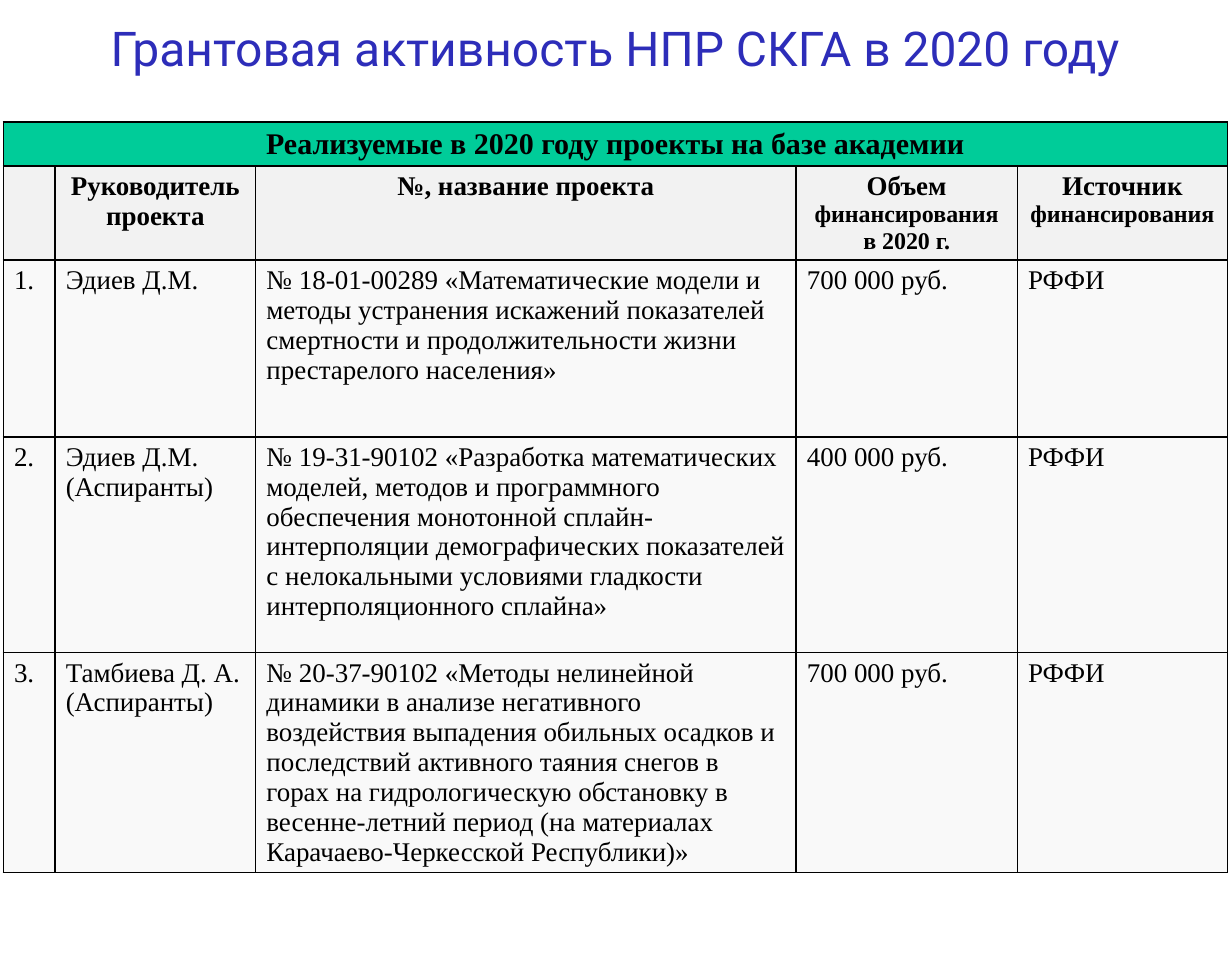
from lxml import etree
from pptx import Presentation
from pptx.dml.color import RGBColor
from pptx.enum.text import MSO_ANCHOR, MSO_AUTO_SIZE, PP_ALIGN
from pptx.oxml.ns import qn
from pptx.util import Inches, Pt

LEFT, CENTER = PP_ALIGN.LEFT, PP_ALIGN.CENTER
TOP, FIXED = MSO_ANCHOR.TOP, MSO_AUTO_SIZE.NONE
BLUE = RGBColor(0x2D, 0x2D, 0xB9)
GREEN = RGBColor(0x00, 0xCC, 0x99)
GREY = RGBColor(0xF2, 0xF2, 0xF2)
PALE = RGBColor(0xF9, 0xF9, 0xF9)
BLACK = RGBColor(0, 0, 0)
SERIF = "Times New Roman"

TITLE = "Грантовая активность НПР СКГА в 2020 году"
BANNER = "Реализуемые в 2020 году проекты на базе академии"
# Each heading: large part, small part
HEADS = [
    ("", ""),
    ("Руководитель проекта", ""),
    ("№, название проекта", ""),
    ("Объем ", "финансирования в 2020 г."),
    ("Источник ", "финансирования"),
]
GRANTS = [
    ("1.", "Эдиев Д.М.",
     "№ 18-01-00289 «Математические модели и методы устранения искажений "
     "показателей смертности и продолжительности жизни престарелого населения»",
     "700 000 руб.", "РФФИ"),
    ("2.", "Эдиев Д.М.\n(Аспиранты)",
     "№ 19-31-90102 «Разработка математических моделей, методов и программного "
     "обеспечения монотонной сплайн-интерполяции демографических показателей "
     "с нелокальными условиями гладкости интерполяционного сплайна»",
     "400 000 руб.", "РФФИ"),
    ("3.", "Тамбиева Д. А.\n(Аспиранты)",
     "№ 20-37-90102 «Методы нелинейной динамики в анализе негативного "
     "воздействия выпадения обильных осадков и последствий активного таяния "
     "снегов в горах на гидрологическую обстановку в весенне-летний период "
     "(на материалах Карачаево-Черкесской Республики)»",
     "700 000 руб.", "РФФИ"),
]
COLS = [0.48, 1.86, 5.01, 2.05, 1.95]
ROWS = [0.41, 0.87, 1.64, 2, 2.03]


def style(font, name, size, color, bold=False):
    font.name, font.size, font.bold = name, Pt(size), bold
    font.color.rgb = color


def add_title(slide, left, top, width, height):
    title = slide.shapes.title
    title.left, title.top = Inches(left), Inches(top)
    title.width, title.height = Inches(width), Inches(height)
    frame = title.text_frame
    frame.text = TITLE
    frame.auto_size, frame.vertical_anchor = FIXED, TOP
    para = frame.paragraphs[0]
    para.alignment = CENTER
    style(para.runs[0].font, "Roboto", 32, BLUE)


def add_edges(cell):
    """Draw a thin black line on all four sides of the cell."""
    props = cell._tc.get_or_add_tcPr()
    for place, side in enumerate(("lnL", "lnR", "lnT", "lnB")):
        line = etree.Element(qn("a:" + side), w=str(Pt(1)))
        fill = etree.SubElement(line, qn("a:solidFill"))
        etree.SubElement(fill, qn("a:srgbClr"), val=str(BLACK))
        props.insert(place, line)


def fill_cell(cell, text, color, size=18, align=LEFT, bold=False, small=""):
    cell.fill.solid()
    cell.fill.fore_color.rgb = color
    cell.text_frame.text = text
    for para in cell.text_frame.paragraphs:
        para.alignment = align
        style(para.font, SERIF, size, BLACK, bold)
        for run in para.runs:
            style(run.font, SERIF, size, BLACK, bold)
    if small:
        run = cell.text_frame.paragraphs[0].add_run()
        run.text = small
        style(run.font, SERIF, 16, BLACK, bold)


def add_grants(slide, left, top):
    frame = slide.shapes.add_table(
        len(ROWS), len(COLS), Inches(left), Inches(top),
        Inches(sum(COLS)), Inches(sum(ROWS)))
    table = frame.table
    table.first_row = table.horz_banding = False
    for col, width in zip(table.columns, COLS):
        col.width = Inches(width)
    for row, height in zip(table.rows, ROWS):
        row.height = Inches(height)
    for cell in table.iter_cells():
        add_edges(cell)

    table.cell(0, 0).merge(table.cell(0, len(COLS) - 1))
    fill_cell(table.cell(0, 0), BANNER, GREEN, 20, CENTER, True)
    for col, (text, small) in enumerate(HEADS):
        fill_cell(table.cell(1, col), text, GREY, 18, CENTER, True, small)
    for row, grant in enumerate(GRANTS, 2):
        for col, text in enumerate(grant):
            fill_cell(table.cell(row, col), text, PALE)


def main():
    deck = Presentation()
    deck.slide_width, deck.slide_height = Inches(11.42), Inches(8.9)
    slide = deck.slides.add_slide(deck.slide_layouts[5])
    add_title(slide, 0.47, 0.12, 10.47, 0.9)
    add_grants(slide, 0.03, 1.13)
    deck.save("out.pptx")


if __name__ == "__main__":
    main()
